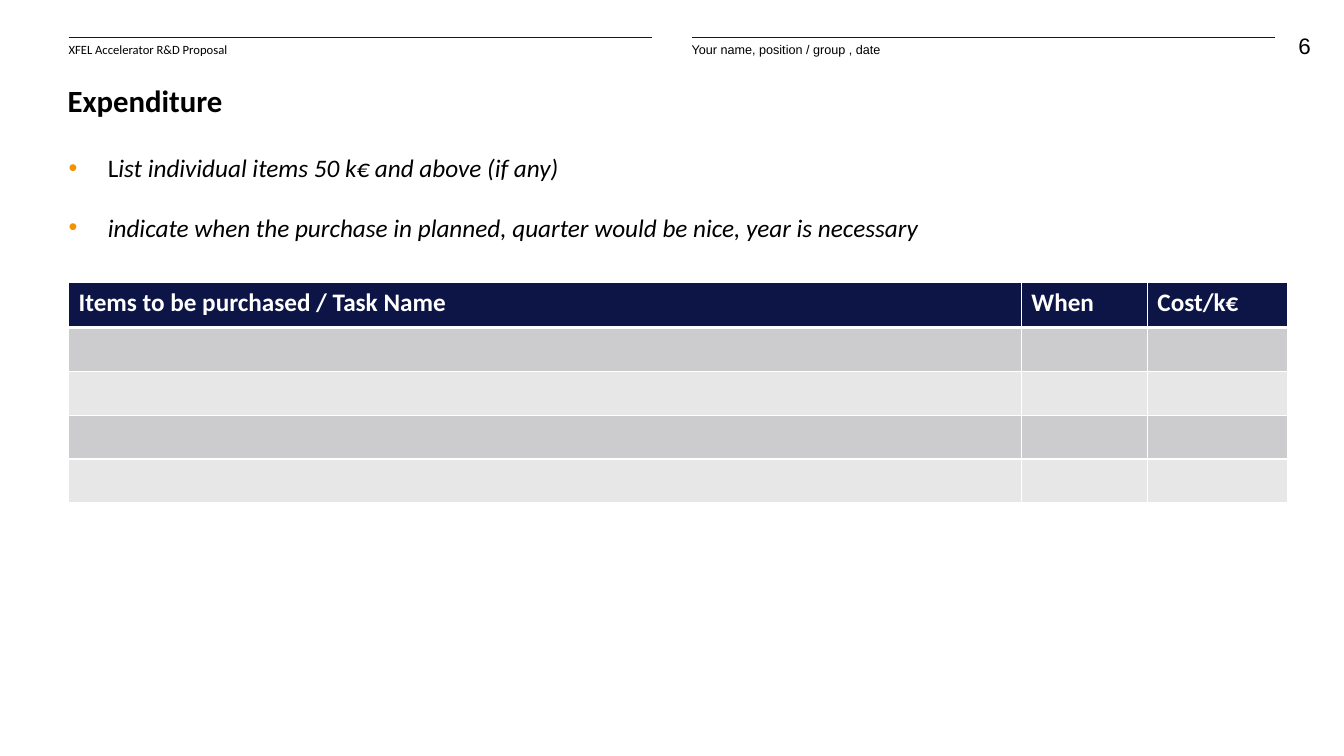
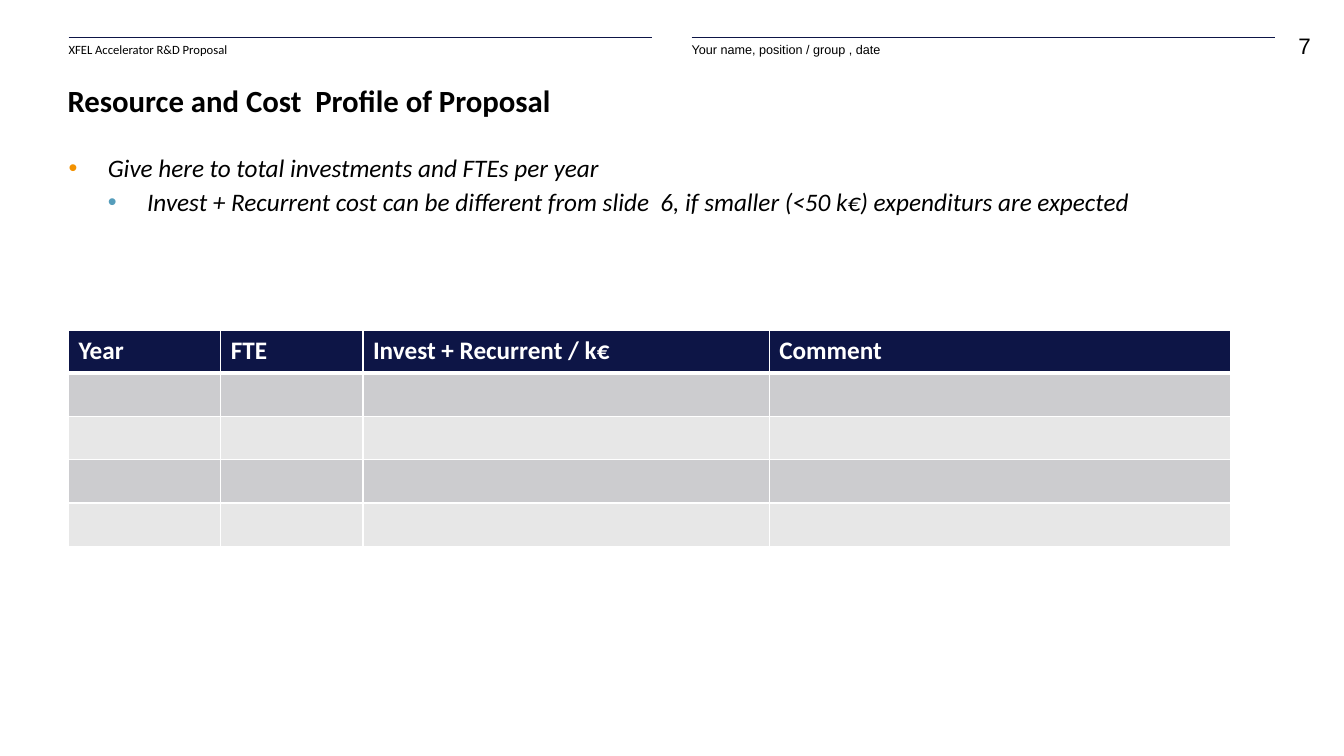
from lxml import etree
from pptx import Presentation
from pptx.dml.color import RGBColor
from pptx.enum.shapes import MSO_CONNECTOR
from pptx.enum.text import MSO_ANCHOR, PP_ALIGN
from pptx.oxml.ns import qn
from pptx.util import Inches, Pt

STRAIGHT = MSO_CONNECTOR.STRAIGHT
TOP, BOTTOM = MSO_ANCHOR.TOP, MSO_ANCHOR.BOTTOM
LEFT, RIGHT = PP_ALIGN.LEFT, PP_ALIGN.RIGHT

NAVY, BLACK, WHITE = "0D1546", "000000", "FFFFFF"
BAND_FILLS = ("CCCCCF", "E7E7E7")
BULLET_COLORS = ("F39200", "559DBB")
FONT, FOOT_FONT = "Calibri", "Arial"
MARGIN, HALF_WIDTH, SECOND_HALF = 0.68, 5.79, 6.86
CONTENT_WIDTH, INDENT = 11.97, 0.39


def rgb(color):
    return RGBColor.from_string(color)


def add_color(parent, color):
    etree.SubElement(parent, qn("a:srgbClr"), val=color)


class ProposalDeck:
    def __init__(self):
        self.deck = Presentation()
        self.deck.slide_width = Inches(13.33)
        self.deck.slide_height = Inches(7.5)
        self.slide = None

    def style(self, font, size, color=BLACK, name=FONT, bold=False, italic=False):
        font.name, font.size = name, Pt(size)
        font.bold, font.italic = bold, italic
        font.color.rgb = rgb(color)

    def frame(self, left, top, width, height, anchor=TOP):
        box = self.slide.shapes.add_textbox(
            Inches(left), Inches(top), Inches(width), Inches(height))
        frame = box.text_frame
        frame.word_wrap = True
        frame.vertical_anchor = anchor
        frame.margin_left = frame.margin_right = 0
        frame.margin_top = frame.margin_bottom = 0
        return frame

    def text(self, content, left, top, width, height, size,
             name=FONT, bold=False, align=LEFT, anchor=TOP):
        frame = self.frame(left, top, width, height, anchor)
        frame.text = content
        para = frame.paragraphs[0]
        para.alignment = align
        self.style(para.runs[0].font, size, name=name, bold=bold)

    def rule(self, left, top, width):
        line = self.slide.shapes.add_connector(
            STRAIGHT, Inches(left), Inches(top), Inches(left + width), Inches(top))
        line.line.color.rgb = rgb(NAVY)
        line.line.width = Pt(0.5)
        etree.SubElement(line._element.spPr, qn("a:effectLst"))

    def page(self, number, title):
        self.slide = self.deck.slides.add_slide(self.deck.slide_layouts[6])
        # Header band
        self.text(str(number), 12.44, 0.32, 0.56, 0.32, 16, FOOT_FONT, align=RIGHT)
        headers = ((MARGIN, "XFEL Accelerator R&D Proposal", FONT),
                   (SECOND_HALF, "Your name, position / group , date", FOOT_FONT))
        for left, label, name in headers:
            self.rule(left, 0.37, HALF_WIDTH)
            self.text(label, left, 0.42, HALF_WIDTH, 0.24, 9, name)
        # Title
        self.text(title, 0.67, 0.79, 11.98, 0.39, 22, bold=True, anchor=BOTTOM)

    def bullets(self, items):
        """Each item is (level, [(text, italic), ...])."""
        frame = self.frame(MARGIN, 1.47, CONTENT_WIDTH, 1.04)
        for index, (level, spans) in enumerate(items):
            para = frame.add_paragraph() if index else frame.paragraphs[0]
            para.level = level
            properties = para._p.get_or_add_pPr()
            properties.set("marL", str(Inches(INDENT * (level + 1))))
            properties.set("indent", str(-Inches(INDENT)))
            add_color(etree.SubElement(properties, qn("a:buClr")), BULLET_COLORS[level])
            etree.SubElement(properties, qn("a:buFont"), typeface=FOOT_FONT)
            etree.SubElement(properties, qn("a:buChar"), char="•")
            para.line_spacing = 1.14
            para.space_before = Pt(18 if index and level == 0 else 0)
            for content, italic in spans:
                span = para.add_run()
                span.text = content
                self.style(span.font, 18, italic=italic)

    def borders(self, cell, top, bottom):
        properties = cell._tc.get_or_add_tcPr()
        widths = (("a:lnL", 1), ("a:lnR", 1), ("a:lnT", top), ("a:lnB", bottom))
        for position, (tag, width) in enumerate(widths):
            edge = etree.Element(qn(tag), w=str(Pt(width)))
            add_color(etree.SubElement(edge, qn("a:solidFill")), WHITE)
            properties.insert(position, edge)

    def table(self, top, height, header_height, columns, body_rows=4):
        """Columns are (heading, width); a None heading joins the column before."""
        row_height = (height - header_height) / body_rows
        heights = [header_height] + [row_height] * body_rows
        width = sum(column_width for _, column_width in columns)
        table = self.slide.shapes.add_table(
            len(heights), len(columns), Inches(MARGIN), Inches(top),
            Inches(width), Inches(height)).table
        for column, (_, column_width) in zip(table.columns, columns):
            column.width = Inches(column_width)
        for row_index, cell_height in enumerate(heights):
            table.rows[row_index].height = Inches(cell_height)
            fill = BAND_FILLS[(row_index - 1) % 2] if row_index else NAVY
            for column_index, (heading, _) in enumerate(columns):
                cell = table.cell(row_index, column_index)
                cell.fill.solid()
                cell.fill.fore_color.rgb = rgb(fill)
                self.borders(cell, 3 if row_index == 1 else 1, 1 if row_index else 3)
                if heading is None:
                    table.cell(row_index, column_index - 1).merge(cell)
                elif row_index == 0:
                    cell.text = heading
                    span = cell.text_frame.paragraphs[0].runs[0]
                    self.style(span.font, 18, WHITE, bold=True)


def main():
    proposal = ProposalDeck()

    # Expenditure
    proposal.page(6, "Expenditure")
    proposal.bullets([
        (0, [("L", False), ("ist individual items 50 k€ and above (if any)", True)]),
        (0, [("indicate when the purchase in planned, quarter would be nice, "
              "year is necessary", True)]),
    ])
    proposal.table(2.8, 2.19, 0.45, [
        ("Items to be purchased / Task Name", 9.45), ("When", 1.25), ("Cost/k€", 1.39)])

    # Resources and costs
    proposal.page(7, "Resource and Cost  Profile of Proposal")
    proposal.bullets([
        (0, [("Give here to total investments and FTEs per year", True)]),
        (1, [("Invest + Recurrent cost can be different from slide  6, "
              "if smaller (<50 k€) expenditurs are expected", True)]),
    ])
    proposal.table(3.28, 2.14, 0.42, [
        ("Year", 1.51), ("FTE", 1.41), ("Invest + Recurrent / k€", 1.66), (None, 2.37),
        ("Comment", 4.58)])

    proposal.deck.save("out.pptx")


if __name__ == "__main__":
    main()
